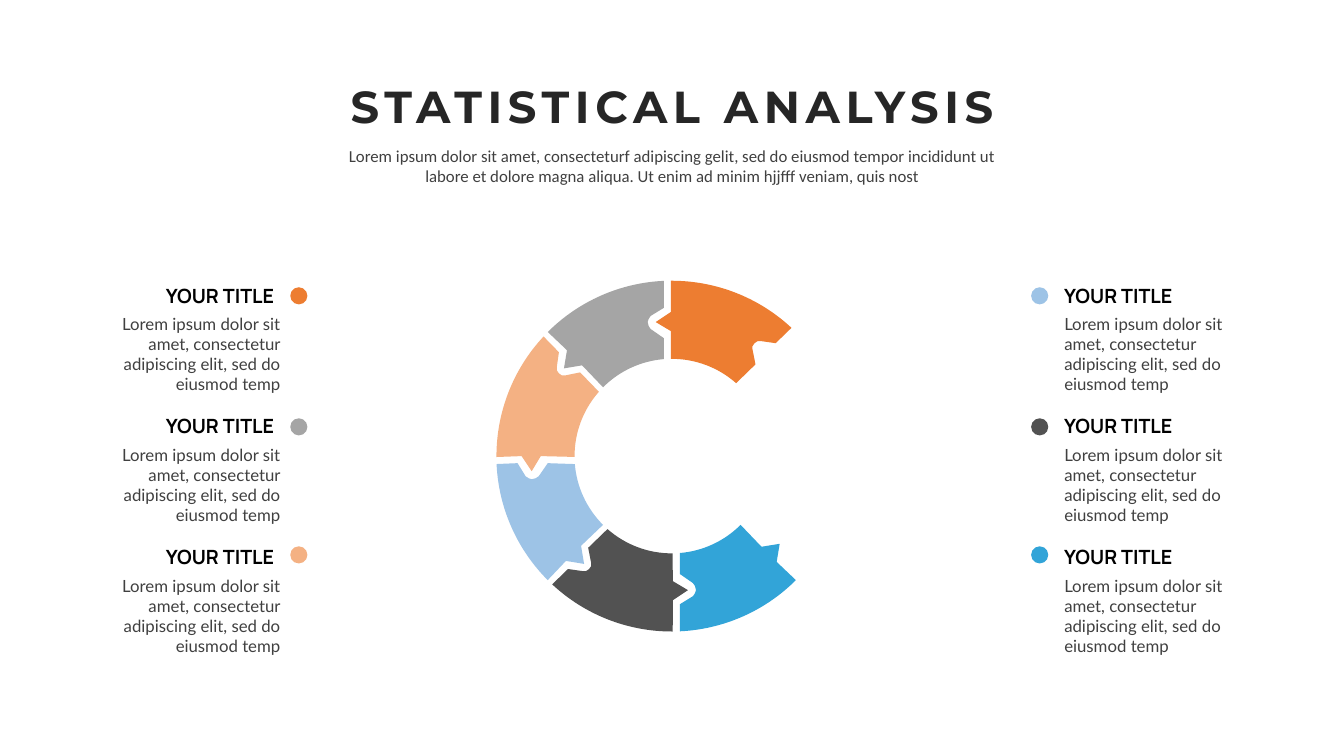
import math
from lxml import etree
from pptx import Presentation
from pptx.dml.color import RGBColor
from pptx.enum.shapes import MSO_SHAPE
from pptx.enum.text import MSO_ANCHOR, MSO_AUTO_SIZE, PP_ALIGN
from pptx.oxml.ns import qn
from pptx.util import Pt

PX = 9144
LEFT, CENTER, RIGHT = PP_ALIGN.LEFT, PP_ALIGN.CENTER, PP_ALIGN.RIGHT
OVAL = MSO_SHAPE.OVAL
TOP = MSO_ANCHOR.TOP
GROW = MSO_AUTO_SIZE.SHAPE_TO_FIT_TEXT

ORANGE, GRAY, PEACH = "ED7D31", "A5A5A5", "F4B183"
PALE_BLUE, CHARCOAL, BLUE = "9DC3E6", "525252", "32A4D8"
BLACK, HEADING, BODY = "000000", "262626", "404040"


def paint(target, color):
    target.fill.solid()
    target.fill.fore_color.rgb = RGBColor.from_string(color)
    if hasattr(target, "line"):
        target.line.fill.background()
        target.shadow.inherit = False


def write(box, place, text, font, size, color, align, bold=False, wrap=True):
    box.left, box.top, box.width, box.height = [n * PX for n in place]
    frame = box.text_frame
    frame.text = text
    frame.word_wrap = wrap
    frame.auto_size = GROW
    frame.vertical_anchor = TOP
    paragraph = frame.paragraphs[0]
    paragraph.alignment = align
    paragraph.font.name = font
    paragraph.font.size = Pt(size)
    paragraph.font.bold = bold
    paragraph.font.color.rgb = RGBColor.from_string(color)


deck = Presentation()
deck.slide_width, deck.slide_height = 4000 * PX // 3, 750 * PX
slide = deck.slides.add_slide(deck.slide_layouts[5])
shapes = slide.shapes
paint(slide.background, "FFFFFF")

heading = shapes.title
write(heading, (315, 73, 704, 64), "STATISTICAL ANALYSIS",
      "Montserrat", 32, HEADING, CENTER, bold=True)
heading.text_frame.paragraphs[0].runs[0]._r.get_or_add_rPr().set("spc", "400")
write(shapes.add_textbox(0, 0, 0, 0), (315, 140, 704, 50),
      "Lorem ipsum dolor sit amet, consecteturf adipiscing gelit, sed do eiusmod "
      "tempor incididunt ut labore et dolore magna aliqua. Ut enim ad minim hjjfff "
      "veniam, quis nost", "Calibri", 12, BODY, CENTER)

RING_X, RING_Y = 666.5, 452.5
OUTER, INNER = 174, 96.5
orange_socket = [(103, -112), (89, -114), (85, -114), (82, -112),
                 (80, -109), (80, -106), (83, -91)]
orange_tip = [(-1, -124), (-16, -133), (-1, -143)]
gray_socket = [(-8, -147), (-21, -139), (-23, -136), (-24, -133),
               (-23, -129), (-21, -126), (-8, -117)]
gray_tip = [(-89, -90), (-107, -87), (-104, -105)]
peach_tip = [(x + 1, y - 6) for x, y in orange_tip]
pale_socket = [(x + 1, y - 6) for x, y in gray_socket]
orange_arcs = ((OUTER, -90.3, -47), (INNER, -48.6, -90.5))
gray_arcs = ((OUTER, -135, -92.6), (INNER, -94.7, -135))
segments = [
    (BLUE, 2, gray_arcs, gray_socket, gray_tip),
    (ORANGE, 0, orange_arcs, orange_socket, orange_tip),
    (PEACH, 1, orange_arcs, orange_socket, peach_tip),
    (PALE_BLUE, 1, gray_arcs, pale_socket, gray_tip),
    (GRAY, 0, gray_arcs, gray_socket, gray_tip),
    (CHARCOAL, 2, orange_arcs, orange_socket, orange_tip),
]
for color, quarter_turns, arcs, socket, tip in segments:
    curves = []
    for radius, begin, end in arcs:
        a, b = math.radians(begin), math.radians(end)
        pull = 4 / 3 * math.tan((b - a) / 4)
        curves.append([
            (radius * math.cos(a), radius * math.sin(a)),
            (radius * (math.cos(a) - pull * math.sin(a)),
             radius * (math.sin(a) + pull * math.cos(a))),
            (radius * (math.cos(b) + pull * math.sin(b)),
             radius * (math.sin(b) - pull * math.cos(b))),
            (radius * math.cos(b), radius * math.sin(b)),
        ])
    points = curves[0] + socket + curves[1] + tip
    for turn in range(quarter_turns):
        points = [(y, -x) for x, y in points]
    points = [(round((RING_X + x) * PX), round((RING_Y + y) * PX)) for x, y in points]
    inner_start = 4 + len(socket)
    handles = (1, 2, inner_start + 1, inner_start + 2)
    corners = [p for i, p in enumerate(points) if i not in handles]
    builder = shapes.build_freeform(*corners[0])
    builder.add_line_segments(corners[1:], close=True)
    segment = builder.convert_to_shape()
    paint(segment, color)
    edges = list(segment._element.iter(qn("a:lnTo")))
    for edge, handle in ((edges[0], 1), (edges[len(socket) + 2], inner_start + 1)):
        edge.tag = qn("a:cubicBezTo")
        for i, (x, y) in enumerate(points[handle:handle + 2]):
            control = etree.Element(qn("a:pt"), x=str(x - segment.left), y=str(y - segment.top))
            edge.insert(i, control)

columns = [
    (1046, 1046, 1023, LEFT, (PALE_BLUE, CHARCOAL, BLUE)),
    (149, 69, 288, RIGHT, (ORANGE, GRAY, PEACH)),
]
ROWS = ((277, 306, 285), (406, 436, 415), (536, 566, 542))
for label_x, detail_x, dot_x, align, colors in columns:
    for color, (label_y, detail_y, dot_y) in zip(colors, ROWS):
        label = shapes.add_textbox(0, 0, 0, 0)
        write(label, (label_x, label_y, 133, 34),
              "YOUR TITLE", "Manrope", 14, BLACK, align, bold=True, wrap=False)
        detail = shapes.add_textbox(0, 0, 0, 0)
        write(detail, (detail_x, detail_y, 219, 71),
              "Lorem ipsum dolor sit amet, consectetur adipiscing elit, sed do eiusmod temp",
              "Lato", 12, BODY, align)
        if align == LEFT:
            shapes.add_group_shape([label, detail])
        dot = shapes.add_shape(OVAL, dot_x * PX, dot_y * PX, 17 * PX, 17 * PX)
        paint(dot, color)

deck.save("out.pptx")
